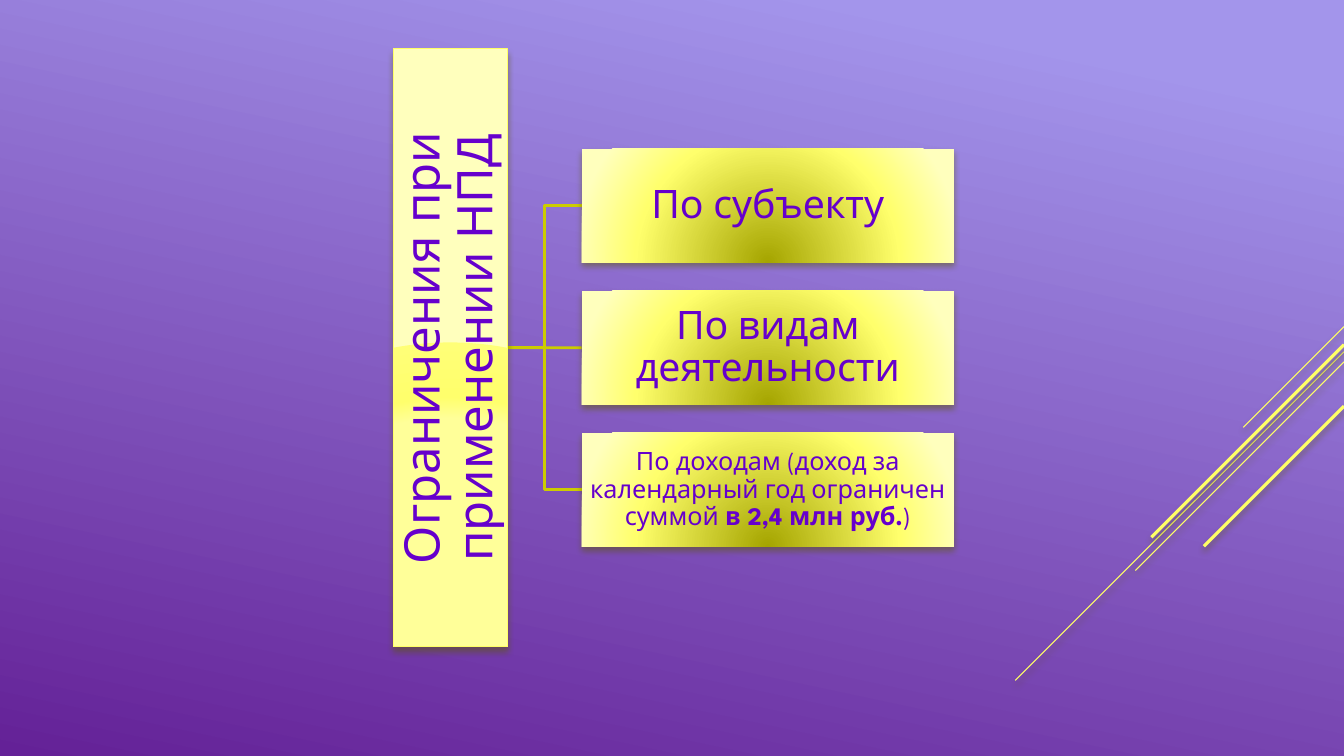
from dataclasses import dataclass

from lxml import etree
from pptx import Presentation
from pptx.dml.color import RGBColor
from pptx.enum.shapes import MSO_CONNECTOR, MSO_SHAPE
from pptx.enum.text import MSO_ANCHOR, PP_ALIGN
from pptx.util import Inches, Pt

RECTANGLE = MSO_SHAPE.RECTANGLE
STRAIGHT = MSO_CONNECTOR.STRAIGHT
MIDDLE = MSO_ANCHOR.MIDDLE
CENTER = PP_ALIGN.CENTER
LEFT_SIDE = 1
DRAWING_NS = "http://schemas.openxmlformats.org/drawingml/2006/main"


@dataclass(frozen=True)
class Theme:
    font: str = "League Spartan"
    text: str = "6600CC"
    accent: str = "FFFF66"
    bracket: str = "CCCC00"
    shadow: str = "5A5A00"
    background: tuple = ((10, "A395EB"), (100, "642197"))
    bar_fill: tuple = ((75, "FFFF99"), (82, "FFFF6C"), (100, "FFFF77"), (100, "FFFFBD"))
    box_fill: tuple = ((0, "A5A500"), (68, "FFFF6C"), (100, "FFFFBD"))
    title_size: int = 35
    box_size: int = 28
    detail_size: int = 18
    thin: float = 0.75
    thick: float = 2.25
    bracket_width: float = 2


def drawing_element(tag, content=""):
    return etree.fromstring(f'<a:{tag} xmlns:a="{DRAWING_NS}">{content}</a:{tag}>')


def glow_gradient(stops):
    """Circular gradient centred below the lower edge of the shape."""
    marks = "".join(
        f'<a:gs pos="{position * 1000}"><a:srgbClr val="{color}"/></a:gs>'
        for position, color in stops
    )
    return drawing_element(
        "gradFill",
        f'<a:gsLst>{marks}</a:gsLst><a:path path="circle">'
        '<a:fillToRect l="50000" t="130000" r="50000" b="-30000"/></a:path>',
    )


def write_text(frame, runs, *, size, color, font, margin=0.02):
    """Fill a frame with one centred paragraph of (text, bold) runs."""
    frame.word_wrap = True
    frame.vertical_anchor = MIDDLE
    frame.margin_left = frame.margin_right = Inches(margin)
    frame.margin_top = frame.margin_bottom = Inches(margin)
    paragraph = frame.paragraphs[0]
    paragraph.alignment = CENTER
    paragraph.line_spacing = 0.9
    for text, bold in runs:
        run = paragraph.add_run()
        run.text = text
        run.font.size = Pt(size)
        run.font.bold = bold
        run.font.name = font
        run.font.color.rgb = RGBColor.from_string(color)


class SlideBuilder:
    def __init__(self, slide, theme):
        self.slide = slide
        self.theme = theme

    def paint_background(self):
        fill = self.slide.background.fill
        fill.gradient()
        fill.gradient_angle = 360 - 102
        for stop, (position, color) in zip(fill.gradient_stops, self.theme.background):
            stop.position = position / 100
            stop.color.rgb = RGBColor.from_string(color)

    def set_line(self, line, color, width):
        line.color.rgb = RGBColor.from_string(color)
        line.width = Pt(width)

    def set_effect(self, properties, shadow):
        effects = drawing_element("effectLst")
        if shadow:
            outer = etree.SubElement(
                effects, f"{{{DRAWING_NS}}}outerShdw",
                blurRad=str(Pt(4.5)), dist=str(Pt(3)), dir="5400000", rotWithShape="0",
            )
            color = etree.SubElement(outer, f"{{{DRAWING_NS}}}srgbClr", val=self.theme.shadow)
            etree.SubElement(color, f"{{{DRAWING_NS}}}alpha", val="48000")
        for existing in properties.findall(f"{{{DRAWING_NS}}}effectLst"):
            properties.remove(existing)
        properties.append(effects)

    def line(self, start, end, color, width, shadow=False):
        connector = self.slide.shapes.add_connector(
            STRAIGHT, *(Inches(value) for value in (*start, *end))
        )
        self.set_line(connector.line, color, width)
        self.set_effect(connector.element.spPr, shadow)
        return connector

    def bracket(self, points):
        corners = [(Inches(x), Inches(y)) for x, y in points]
        outline = self.slide.shapes.build_freeform(*corners[0])
        outline.add_line_segments(corners[1:], close=False)
        shape = outline.convert_to_shape()
        shape.fill.background()
        shape.shadow.inherit = False
        self.set_line(shape.line, self.theme.bracket, self.theme.bracket_width)

    def panel(self, center, size, stops, runs, text_size, rotation=0, outlined=False, margin=0.02):
        width, height = size
        shape = self.slide.shapes.add_shape(
            RECTANGLE, Inches(center[0] - width / 2), Inches(center[1] - height / 2),
            Inches(width), Inches(height),
        )
        shape.rotation = rotation
        shape.fill.background()
        properties = shape.element.spPr
        plain_fill = properties.find(f"{{{DRAWING_NS}}}noFill")
        properties.replace(plain_fill, glow_gradient(stops))
        if outlined:
            self.set_line(shape.line, self.theme.accent, self.theme.thin)
        else:
            shape.line.fill.background()
        self.set_effect(properties, shadow=True)
        write_text(shape.text_frame, runs, size=text_size, color=self.theme.text,
                   font=self.theme.font, margin=margin)
        return shape


def main():
    theme = Theme()
    deck = Presentation()
    deck.slide_width, deck.slide_height = Inches(13.33), Inches(7.5)
    builder = SlideBuilder(deck.slides.add_slide(deck.slide_layouts[6]), theme)
    builder.paint_background()

    # Diagonal rays: height at the right edge, horizontal reach, width
    rays = [
        (3.24, 1.0, theme.thin), (3.49, 3.26, theme.thin), (3.59, 2.07, theme.thin),
        (3.42, 1.91, theme.thick), (4.03, 1.39, theme.thick),
    ]
    for top, reach, width in rays:
        builder.line((13.33, top), (13.33 - reach, top + reach), theme.accent, width, shadow=True)

    middle_y, pitch, thickness = 3.45, 1.41, 1.13
    bar_right, trunk_x, box_left, box_width = 5.03, 5.4, 5.77, 3.69
    for box_y in (middle_y + pitch, middle_y - pitch):
        builder.bracket([(bar_right, middle_y), (trunk_x, middle_y),
                         (trunk_x, box_y), (box_left, box_y)])
    middle_link = builder.line((bar_right, middle_y), (box_left, middle_y),
                               theme.bracket, theme.bracket_width)

    builder.panel((bar_right - thickness / 2, middle_y), (5.93, thickness), theme.bar_fill,
                  [("Ограничения при применении НПД", False)], theme.title_size,
                  rotation=270, outlined=True)

    restrictions = [
        ([("По субъекту", False)], theme.box_size, 0.02),
        ([("По видам деятельности", False)], theme.box_size, 0.02),
        ([("По доходам (доход за календарный год ограничен суммой ", False),
          ("в 2,4 млн руб.", True), (")", False)], theme.detail_size, 0.01),
    ]
    boxes = [
        builder.panel((box_left + box_width / 2, middle_y + (row - 1) * pitch),
                      (box_width, thickness), theme.box_fill, runs, size, margin=margin)
        for row, (runs, size, margin) in enumerate(restrictions)
    ]
    middle_link.end_connect(boxes[1], LEFT_SIDE)
    deck.save("out.pptx")


if __name__ == "__main__":
    main()
